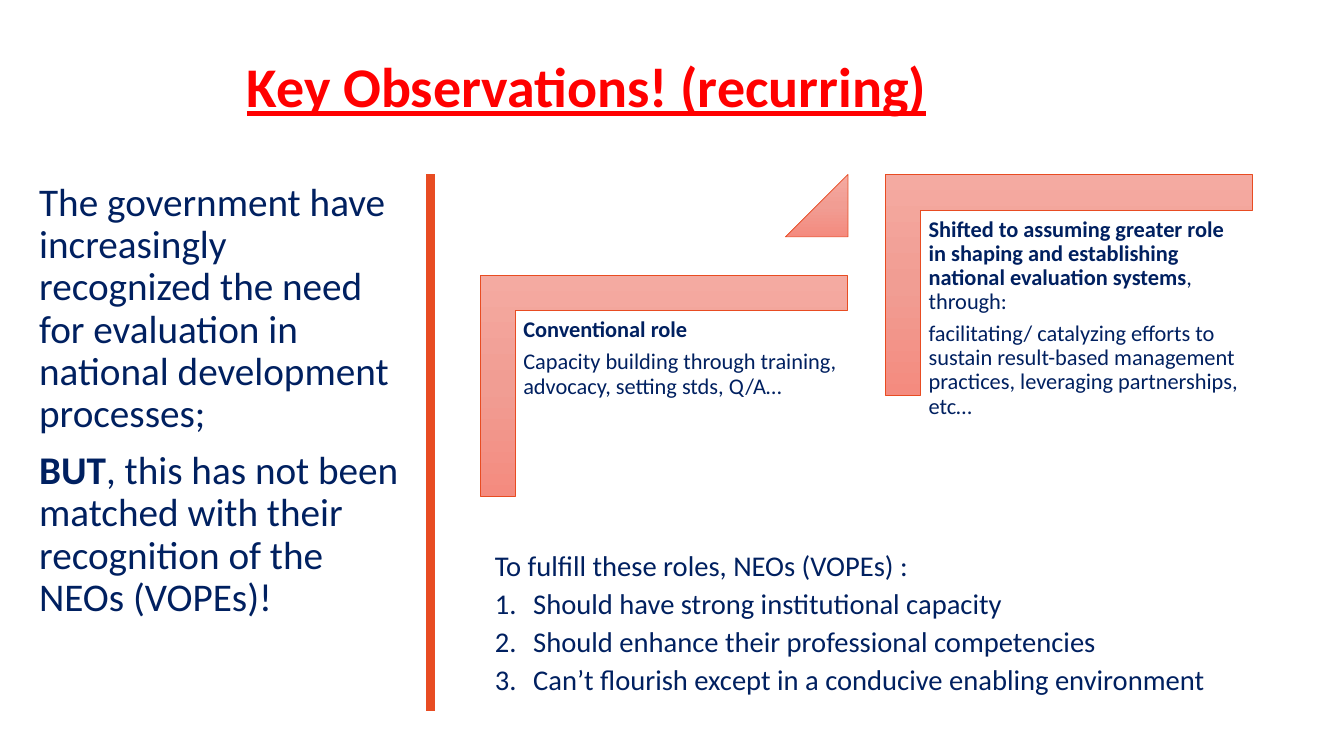
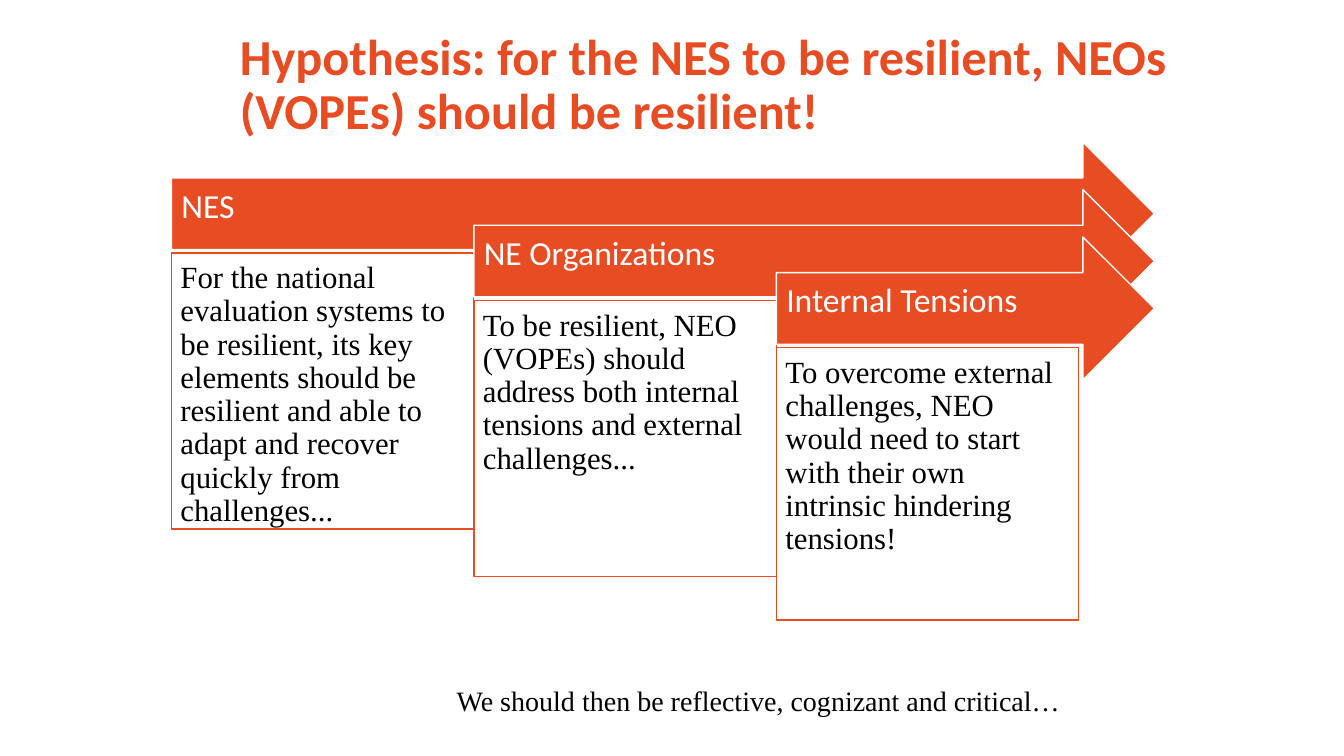
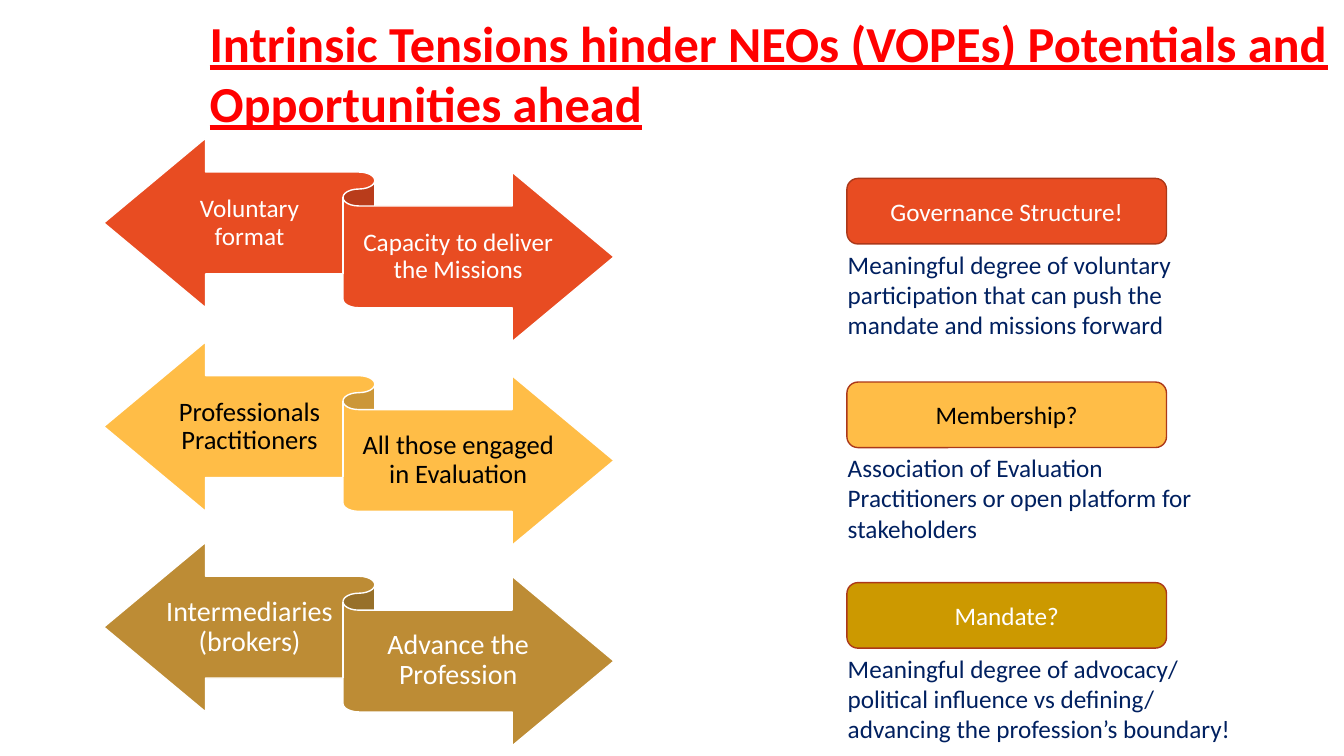
from copy import deepcopy
from dataclasses import dataclass

from lxml.etree import SubElement
from pptx import Presentation
from pptx.dml.color import RGBColor
from pptx.enum.shapes import MSO_CONNECTOR, MSO_SHAPE
from pptx.enum.text import MSO_ANCHOR, PP_ALIGN
from pptx.oxml.ns import qn
from pptx.util import Inches, Pt


@dataclass(frozen=True)
class Theme:
    red: str = "FF0000"
    navy: str = "002060"
    orange: str = "E84C22"
    amber: str = "FFBD47"
    bronze: str = "BD8C35"
    gold: str = "CC9900"
    rust: str = "AC3819"
    white: str = "FFFFFF"
    black: str = "000000"
    salmon: tuple = ("F4AAA1", "F19D93", "F48B7F")
    sans: str = "Calibri"
    serif: str = "Times New Roman"
    title: float = 40
    long_title: float = 36
    lead: float = 28
    heading: float = 24
    quote: float = 22
    steps: float = 20.4
    closing: float = 20
    label: float = 18
    note: float = 16


THEME = Theme()
MARGINS = ("margin_left", "margin_top", "margin_right", "margin_bottom")
STANDARD_INSETS = (0.1, 0.05, 0.1, 0.05)


def set_values(target, values):
    for name, value in values.items():
        setattr(target, name, value)


def text_style(size, color, name=THEME.sans, **extra):
    return {"size": Pt(size), "name": name, "color": color, **extra}


def apply_font(font, style):
    values = dict(style)
    color = values.pop("color")
    set_values(font, values)
    font.color.rgb = RGBColor.from_string(color)


def write_text(shape, paragraphs, style, paragraph_format=None, gap_before=0,
               anchor=MSO_ANCHOR.TOP, insets=STANDARD_INSETS, numbered_from=None):
    """Fill a shape; each paragraph is a string or a list of (text, bold) runs."""
    frame = shape.text_frame
    set_values(frame, {"word_wrap": True, "vertical_anchor": anchor})
    set_values(frame, {side: Inches(inset) for side, inset in zip(MARGINS, insets)})
    for index, content in enumerate(paragraphs):
        paragraph = frame.add_paragraph() if index else frame.paragraphs[0]
        set_values(paragraph, {"alignment": PP_ALIGN.LEFT, **(paragraph_format or {})})
        if index and gap_before:
            paragraph.space_before = Pt(gap_before)
        if numbered_from is not None and index >= numbered_from:
            number_paragraph(paragraph)
        runs = [(content, style.get("bold", False))] if isinstance(content, str) else content
        for text, bold in runs:
            run = paragraph.add_run()
            run.text = text
            apply_font(run.font, {**style, "bold": bold})


def number_paragraph(paragraph):
    properties = paragraph._p.get_or_add_pPr()
    indent = Inches(0.38)
    properties.set("marL", str(indent))
    properties.set("indent", str(-indent))
    SubElement(properties, qn("a:buFont")).set("typeface", "+mj-lt")
    SubElement(properties, qn("a:buAutoNum")).set("type", "arabicPeriod")


def add_text(slide, box, paragraphs, style, **options):
    shape = slide.shapes.add_textbox(*map(Inches, box))
    write_text(shape, paragraphs, style, **options)


def add_figure(slide, kind, box, fill, line, line_width=1, adjustments=()):
    """Add a flat preset shape; a tuple of fill colours makes a gradient."""
    shape = slide.shapes.add_shape(kind, *map(Inches, box))
    shape.shadow.inherit = False
    for index, value in enumerate(adjustments):
        shape.adjustments[index] = value
    if isinstance(fill, tuple):
        fill_downwards(shape, fill)
    else:
        shape.fill.solid()
        shape.fill.fore_color.rgb = RGBColor.from_string(fill)
    shape.line.color.rgb = RGBColor.from_string(line)
    shape.line.width = Pt(line_width)
    return shape


def fill_downwards(shape, colors):
    """Spread the colours evenly from page top to bottom, whatever the rotation."""
    shape.fill.gradient()
    shape.fill.gradient_angle = 270
    gradient = shape._element.spPr.find(qn("a:gradFill"))
    gradient.set("rotWithShape", "0")
    stop_list = gradient.find(qn("a:gsLst"))
    while len(stop_list) < len(colors):
        stop_list.append(deepcopy(stop_list[0]))
    for index, (stop, color) in enumerate(zip(shape.fill.gradient_stops, colors)):
        stop.position = index / (len(colors) - 1)
        stop.color.rgb = RGBColor.from_string(color)


def add_title(slide, box, text, size, color, underline=False, line_spacing=1.0):
    add_text(slide, box, [text], text_style(size, color, bold=True, underline=underline),
             paragraph_format={"line_spacing": line_spacing}, anchor=MSO_ANCHOR.MIDDLE)


def add_divider(slide, x, top, bottom):
    connector = slide.shapes.add_connector(
        MSO_CONNECTOR.STRAIGHT, Inches(x), Inches(top), Inches(x), Inches(bottom))
    connector.line.color.rgb = RGBColor.from_string(THEME.orange)
    connector.line.width = Pt(6)
    SubElement(connector._element.spPr, qn("a:effectLst"))


def add_role_step(slide, left, top, paragraphs):
    """Place a bracket, open to the lower right, with its text inside."""
    width, height, offset = 3.64, 2.19, 0.36
    turned_box = (left + (width - height) / 2, top - (width - height) / 2, height, width)
    bracket = add_figure(slide, MSO_SHAPE.CORNER, turned_box, THEME.salmon,
                         THEME.orange, 0.5, (0.161, 0.161))
    bracket.rotation = 90
    add_text(slide, (left + offset, top + offset, 3.29, 2.88), paragraphs,
             text_style(THEME.note, THEME.navy), insets=(0.07,) * 4,
             paragraph_format={"line_spacing": 0.9, "space_after": Pt(0.35 * THEME.note)})


def build_observations(slide):
    add_title(slide, (2.35, 0.24, 10.35, 1.21), "Key Observations! (recurring)",
              THEME.title, THEME.red, underline=True)
    add_text(slide, (0.29, 1.76, 3.82, 5.29), [
        "The government have increasingly recognized the need for evaluation in "
        "national development processes;",
        [("BUT", True),
         (", this has not been matched with their recognition of the NEOs (VOPEs)!", False)],
    ], text_style(THEME.lead, THEME.navy),
        paragraph_format={"line_spacing": 0.9}, gap_before=10)
    add_text(slide, (4.81, 5.48, 7.52, 1.57), [
        "To fulfill these roles, NEOs (VOPEs) :",
        "Should have strong institutional capacity",
        "Should enhance their professional competencies",
        "Can’t flourish except in a conducive enabling environment",
    ], text_style(THEME.steps, THEME.navy),
        paragraph_format={"line_spacing": 0.7}, gap_before=10, numbered_from=1)
    add_role_step(slide, 4.76, 2.73, [
        [("Conventional role", True)],
        "Capacity building through training, advocacy, setting stds, Q/A…",
    ])
    add_figure(slide, MSO_SHAPE.ISOSCELES_TRIANGLE, (7.79, 1.73, 0.62, 0.62),
               THEME.salmon, THEME.orange, 0.5, (1,))
    add_role_step(slide, 8.78, 1.73, [
        [("Shifted to assuming greater role in shaping and establishing "
          "national evaluation systems", True), (", through:", False)],
        "facilitating/ catalyzing efforts to sustain result-based management "
        "practices, leveraging partnerships, etc…",
    ])
    add_divider(slide, 4.27, 1.73, 7.05)


def add_arrow_stage(slide, left, top, right, heading, body, body_height):
    """Place an arrow running to the right edge and a text panel under its tail."""
    arrow = add_figure(slide, MSO_SHAPE.RIGHT_ARROW, (left, top, right - left, 1.42),
                       THEME.orange, THEME.white)
    write_text(arrow, [heading], text_style(THEME.heading, THEME.white),
               paragraph_format={"line_spacing": 0.9}, anchor=MSO_ANCHOR.MIDDLE,
               insets=(0.1, 0.1, 0.28, 0.23))
    panel = add_figure(slide, MSO_SHAPE.RECTANGLE, (left, top + 1.1, 3, body_height),
                       THEME.white, THEME.orange)
    write_text(panel, [body], text_style(THEME.quote, THEME.black, THEME.serif),
               paragraph_format={"line_spacing": 0.9}, insets=(0.09,) * 4)


def build_hypothesis(slide):
    stages = [
        ("NES", "For the national evaluation systems to be resilient, its key elements should "
         "be resilient and able to adapt and recover quickly from challenges...", 2.74),
        ("NE Organizations", "To be resilient, NEO (VOPEs) should address both internal "
         "tensions and external challenges...", 2.74),
        ("Internal Tensions", "To overcome external challenges, NEO would need to start with "
         "their own intrinsic hindering tensions!", 2.7),
    ]
    for index, stage in enumerate(stages):
        add_arrow_stage(slide, 1.7 + 3 * index, 1.41 + 0.47 * index, 11.45, *stage)
    add_text(slide, (4.43, 6.73, 6.27, 0.44),
             ["We should then be reflective, cognizant and critical…"],
             text_style(THEME.closing, THEME.black, THEME.serif))
    add_title(slide, (2.28, 0.34, 10.71, 1.03),
              "Hypothesis: for the NES to be resilient, NEOs (VOPEs) should be resilient!",
              THEME.long_title, THEME.orange, line_spacing=0.9)


def add_tension_ribbon(slide, left, top, sides, size, fill, ink):
    """Place a two-way ribbon with one text on each half."""
    add_figure(slide, MSO_SHAPE.LEFT_RIGHT_RIBBON, (left, top, 5.06, 2.02),
               fill, THEME.white)
    halves = ((0.61, 0.35, 1.67), (2.53, 0.68, 1.97))
    for text, (dx, dy, width) in zip(sides, halves):
        add_text(slide, (left + dx, top + dy, width, 0.99), [text], text_style(size, ink),
                 paragraph_format={"alignment": PP_ALIGN.CENTER, "line_spacing": 0.9},
                 anchor=MSO_ANCHOR.MIDDLE, insets=(0, 0.07, 0, 0.07))


def add_tension_topic(slide, left, top, topic, explanation, fill, ink):
    """Place a rounded label with its explanation below."""
    label = add_figure(slide, MSO_SHAPE.ROUNDED_RECTANGLE, (left, top, 3.17, 0.65),
                       fill, THEME.rust)
    write_text(label, [topic], text_style(THEME.label, ink),
               paragraph_format={"alignment": PP_ALIGN.CENTER}, anchor=MSO_ANCHOR.MIDDLE)
    add_text(slide, (left - 0.09, top + 0.65, 4.04, 1.01), [explanation],
             text_style(THEME.label, THEME.navy))


def build_tensions(slide):
    add_title(slide, (1.98, 0.02, 11.36, 1.39),
              "Intrinsic Tensions hinder NEOs (VOPEs) Potentials and Opportunities ahead",
              THEME.long_title, THEME.red, underline=True)
    tensions = [
        (1.37, ("Voluntary format", "Capacity to deliver the Missions"), 18,
         THEME.orange, THEME.orange, THEME.white, "Governance Structure!",
         "Meaningful degree of voluntary participation that can push the mandate "
         "and missions forward"),
        (3.39, ("Professionals Practitioners", "All those engaged in Evaluation"), 19,
         THEME.amber, THEME.amber, THEME.black, "Membership?",
         "Association of Evaluation Practitioners or open platform for stakeholders"),
        (5.38, ("Intermediaries (brokers)", "Advance the Profession"), 20,
         THEME.bronze, THEME.gold, THEME.white, "Mandate?",
         "Meaningful degree of advocacy/ political influence vs defining/ advancing "
         "the profession’s boundary!"),
    ]
    for top, sides, size, ribbon_fill, label_fill, ink, topic, explanation in tensions:
        add_tension_ribbon(slide, 1.03, top, sides, size, ribbon_fill, ink)
        add_tension_topic(slide, 8.4, top + 0.4, topic, explanation, label_fill, ink)


def main():
    presentation = Presentation()
    set_values(presentation, {"slide_width": Inches(13.33), "slide_height": Inches(7.5)})
    for build in (build_observations, build_hypothesis, build_tensions):
        build(presentation.slides.add_slide(presentation.slide_layouts[6]))
    presentation.save("out.pptx")


if __name__ == "__main__":
    main()
